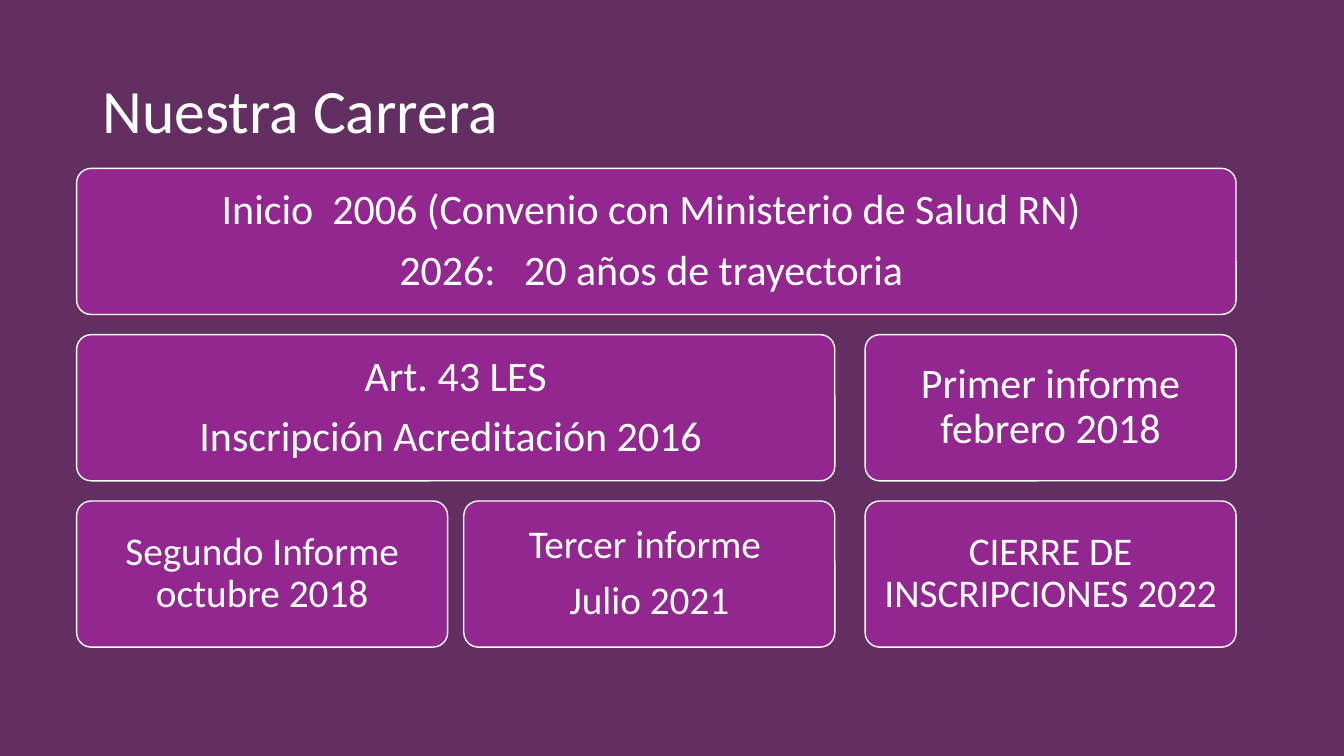
from dataclasses import dataclass

from pptx import Presentation
from pptx.dml.color import RGBColor
from pptx.enum.shapes import MSO_SHAPE
from pptx.enum.text import MSO_ANCHOR, PP_ALIGN
from pptx.slide import Slide
from pptx.util import Inches, Pt

ROUNDED = MSO_SHAPE.ROUNDED_RECTANGLE
MIDDLE = MSO_ANCHOR.MIDDLE
CENTER = PP_ALIGN.CENTER
BLANK_LAYOUT = 6


@dataclass(frozen=True)
class Theme:
    font: str = "Calibri"
    background: RGBColor = RGBColor(0x63, 0x2E, 0x62)
    card: RGBColor = RGBColor(0x92, 0x27, 0x8F)
    ink: RGBColor = RGBColor(0xFF, 0xFF, 0xFF)
    title_size: int = 44
    large_size: int = 30
    small_size: int = 28
    line_spacing: float = 0.9
    space_after: float = 0.35


@dataclass(frozen=True)
class Milestone:
    row: int
    left: float
    width: float
    size: int
    lines: tuple[str, ...]


THEME = Theme()
FIRST_LEFT, SECOND_LEFT, THIRD_LEFT = 0.76, 4.6, 8.58
CARD_WIDTH = 3.68
CARD_HEIGHT = 1.45
ROWS_TOP = 1.67
ROW_PITCH = 1.65
CARD_MARGIN = 0.12

MILESTONES = (
    Milestone(0, FIRST_LEFT, THIRD_LEFT + CARD_WIDTH - FIRST_LEFT, THEME.large_size,
              ("Inicio  2006 (Convenio con Ministerio de Salud RN) ",
               "2026:   20 años de trayectoria ")),
    Milestone(1, FIRST_LEFT, SECOND_LEFT + CARD_WIDTH - FIRST_LEFT, THEME.large_size,
              ("Art. 43 LES", "Inscripción Acreditación 2016 ")),
    Milestone(2, FIRST_LEFT, CARD_WIDTH, THEME.small_size,
              ("Segundo Informe octubre 2018",)),
    Milestone(2, SECOND_LEFT, CARD_WIDTH, THEME.small_size,
              ("Tercer informe ", "Julio 2021")),
    Milestone(1, THIRD_LEFT, CARD_WIDTH, THEME.large_size,
              ("Primer informe febrero 2018",)),
    Milestone(2, THIRD_LEFT, CARD_WIDTH, THEME.small_size,
              ("CIERRE DE INSCRIPCIONES 2022",)),
)


def write_lines(frame, lines: tuple[str, ...], size: int) -> None:
    frame.word_wrap = True
    frame.vertical_anchor = MIDDLE
    frame.text = "\n".join(lines)
    for para in frame.paragraphs:
        para.line_spacing = THEME.line_spacing
        para.font.name = THEME.font
        para.font.size = Pt(size)
        para.font.color.rgb = THEME.ink


def add_title(page: Slide, text: str) -> None:
    box = page.shapes.add_textbox(Inches(0.92), Inches(0.4), Inches(11.5), Inches(1.45))
    write_lines(box.text_frame, (text,), THEME.title_size)


def add_milestone(page: Slide, milestone: Milestone) -> None:
    card = page.shapes.add_shape(
        ROUNDED, Inches(milestone.left), Inches(ROWS_TOP + milestone.row * ROW_PITCH),
        Inches(milestone.width), Inches(CARD_HEIGHT))
    card.adjustments[0] = 0.1
    card.shadow.inherit = False
    card.fill.solid()
    card.fill.fore_color.rgb = THEME.card
    card.line.color.rgb = THEME.ink
    card.line.width = Pt(1)
    frame = card.text_frame
    frame.margin_left = frame.margin_right = Inches(CARD_MARGIN)
    frame.margin_top = frame.margin_bottom = Inches(CARD_MARGIN)
    write_lines(frame, milestone.lines, milestone.size)
    for para in frame.paragraphs:
        para.alignment = CENTER
        para.space_after = Pt(milestone.size * THEME.space_after)


def main() -> None:
    deck = Presentation()
    deck.slide_width = Inches(13.33)
    deck.slide_height = Inches(7.5)
    page = deck.slides.add_slide(deck.slide_layouts[BLANK_LAYOUT])
    page.background.fill.solid()
    page.background.fill.fore_color.rgb = THEME.background
    add_title(page, "Nuestra Carrera")
    for milestone in MILESTONES:
        add_milestone(page, milestone)
    deck.save("out.pptx")


if __name__ == "__main__":
    main()
